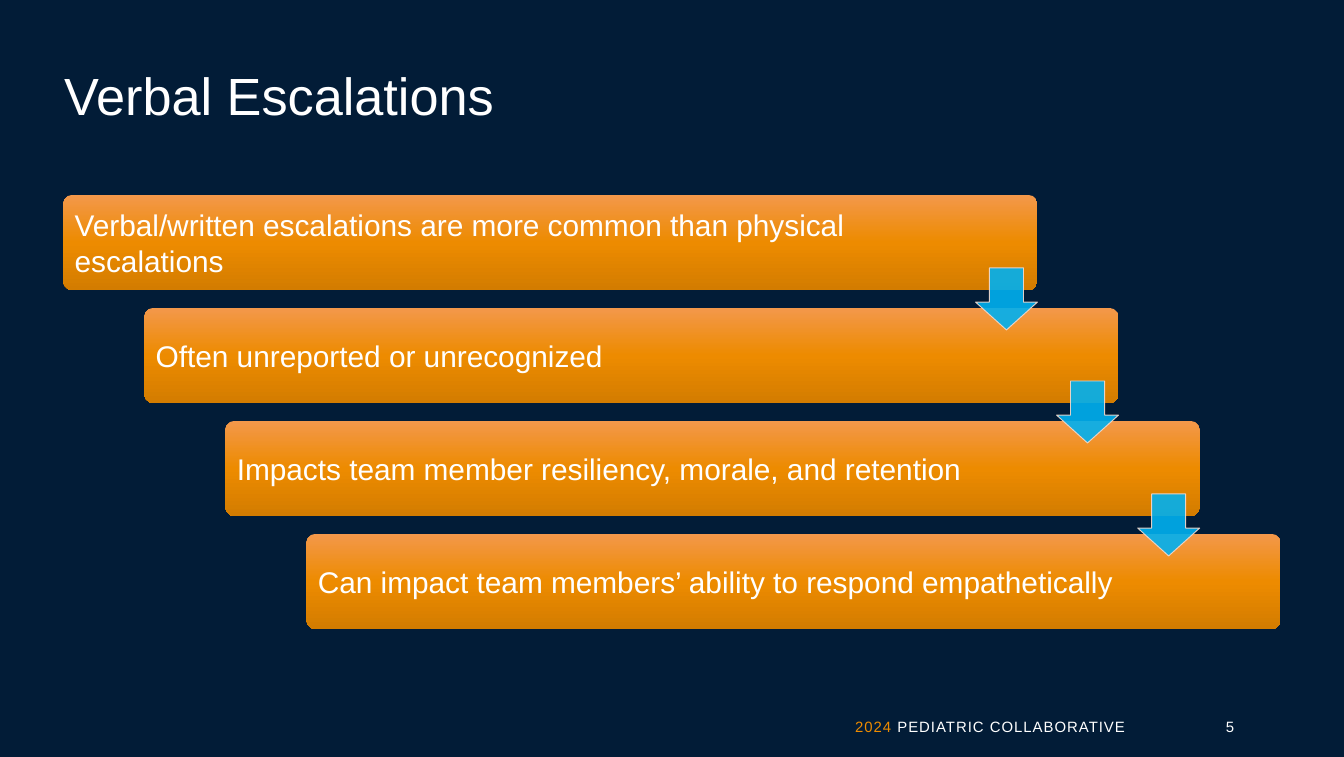
import copy

import pptx
import pptx.dml.color
import pptx.enum.shapes
import pptx.enum.text
import pptx.oxml
import pptx.oxml.ns
import pptx.util

Pt = pptx.util.Pt
SHAPE = pptx.enum.shapes.MSO_SHAPE
ALIGN = pptx.enum.text.PP_ALIGN
ANCHOR = pptx.enum.text.MSO_ANCHOR

NAVY, WHITE, ORANGE = "021C37", "FFFFFF", "ED8B00"
BLUE, PEACH = "00B0F0", "F8DACC"
BAR_STOPS = [(0, "F3984B"), (0.5, ORANGE), (1, "D37C00")]
STEPS = [
    "Verbal/written escalations are more common than physical escalations",
    "Often unreported or unrecognized",
    "Impacts team member resiliency, morale, and retention",
    "Can impact team members’ ability to respond empathetically",
]


def rgb(value):
    return pptx.dml.color.RGBColor.from_string(value)


def format_run(r, size, color=WHITE):
    r.font.name = "Arial"
    r.font.size = Pt(size)
    r.font.color.rgb = rgb(color)


def set_margins(tf, left, top, right, bottom):
    tf.margin_left, tf.margin_top = Pt(left), Pt(top)
    tf.margin_right, tf.margin_bottom = Pt(right), Pt(bottom)


def set_gradient(fill, stops):
    fill.gradient()
    fill.gradient_angle = 270
    first = fill.gradient_stops[0]._gs
    first.getparent().insert(1, copy.deepcopy(first))
    for stop, (position, color) in zip(fill.gradient_stops, stops):
        stop.position = position
        stop.color.rgb = rgb(color)


def set_opacity(fill, percent):
    color = fill._xPr.find(".//" + pptx.oxml.ns.qn("a:srgbClr"))
    color.append(pptx.oxml.parse_xml(
        f'<a:alpha {pptx.oxml.ns.nsdecls("a")} val="{percent * 1000}"/>'))


def add_title(s, left, top, width, height):
    sp = s.shapes.title
    sp.left, sp.top, sp.width, sp.height = map(Pt, (left, top, width, height))
    tf = sp.text_frame
    tf.text = "Verbal Escalations"
    tf.auto_size = pptx.enum.text.MSO_AUTO_SIZE.NONE
    tf.vertical_anchor = ANCHOR.TOP
    set_margins(tf, 0, 0, 0, 7.2)
    p = tf.paragraphs[0]
    p.alignment = ALIGN.LEFT
    format_run(p.runs[0], 28)


def add_bar(s, text, left, top, width, height):
    sp = s.shapes.add_shape(SHAPE.ROUNDED_RECTANGLE, *map(Pt, (left, top, width, height)))
    sp.adjustments[0] = 0.1
    sp.shadow.inherit = False
    set_gradient(sp.fill, BAR_STOPS)
    sp.line.fill.background()
    tf = sp.text_frame
    tf.word_wrap = True
    tf.vertical_anchor = ANCHOR.MIDDLE
    set_margins(tf, 4.7, 5, 63, 5)
    tf.text = text
    p = tf.paragraphs[0]
    p.alignment = ALIGN.LEFT
    format_run(p.runs[0], 16)


def add_arrow(s, left, top, size):
    sp = s.shapes.add_shape(SHAPE.DOWN_ARROW, *map(Pt, (left, top, size, size)))
    sp.adjustments[0], sp.adjustments[1] = 0.55, 0.45
    sp.shadow.inherit = False
    sp.fill.solid()
    sp.fill.fore_color.rgb = rgb(BLUE)
    set_opacity(sp.fill, 90)
    sp.line.color.rgb = rgb(PEACH)
    sp.line.width = Pt(0.5)
    set_opacity(sp.line.fill, 90)


def add_staircase(s, left, top, width, height):
    bar_w, bar_h, arrow = 522, 51.1, 33.2
    gaps = len(STEPS) - 1
    dx, dy = (width - bar_w) / gaps, (height - bar_h) / gaps
    for i, text in enumerate(STEPS):
        add_bar(s, text, left + i * dx, top + i * dy, bar_w, bar_h)
    for i in range(gaps):
        gap_middle = top + i * dy + (bar_h + dy) / 2
        add_arrow(s, left + i * dx + bar_w - arrow, gap_middle - arrow / 2, arrow)


def add_footer_text(s, parts, alignment, spacing, left, top, width, height):
    tf = s.shapes.add_textbox(*map(Pt, (left, top, width, height))).text_frame
    tf.word_wrap = True
    set_margins(tf, 7.2, 3.6, 7.2, 0)
    p = tf.paragraphs[0]
    p.alignment = alignment
    p.line_spacing = 1.2
    for text, color in parts:
        r = p.add_run()
        r.text = text
        format_run(r, 8, color)
        r.font._element.set("spc", str(spacing))


def add_footer(s, left, top, width, height):
    name_w, number_w = 178.5, 31
    add_footer_text(s, [("2024", ORANGE), (" PEDIATRIC COLLABORATIVE", WHITE)],
                    ALIGN.RIGHT, 50, left, top, name_w, height)
    add_footer_text(s, [("5", WHITE)], ALIGN.CENTER, 0,
                    left + width - number_w, top, number_w, height)


def main():
    prs = pptx.Presentation()
    prs.slide_width, prs.slide_height = Pt(720), Pt(405.36)
    s = prs.slides.add_slide(prs.slide_layouts[5])
    s.background.fill.solid()
    s.background.fill.fore_color.rgb = rgb(NAVY)
    add_title(s, 34.4, 34, 652, 67.5)
    add_staircase(s, 33.8, 104.3, 652.3, 232.6)
    add_footer(s, 431.5, 379, 243, 18)
    prs.save("out.pptx")


if __name__ == "__main__":
    main()
